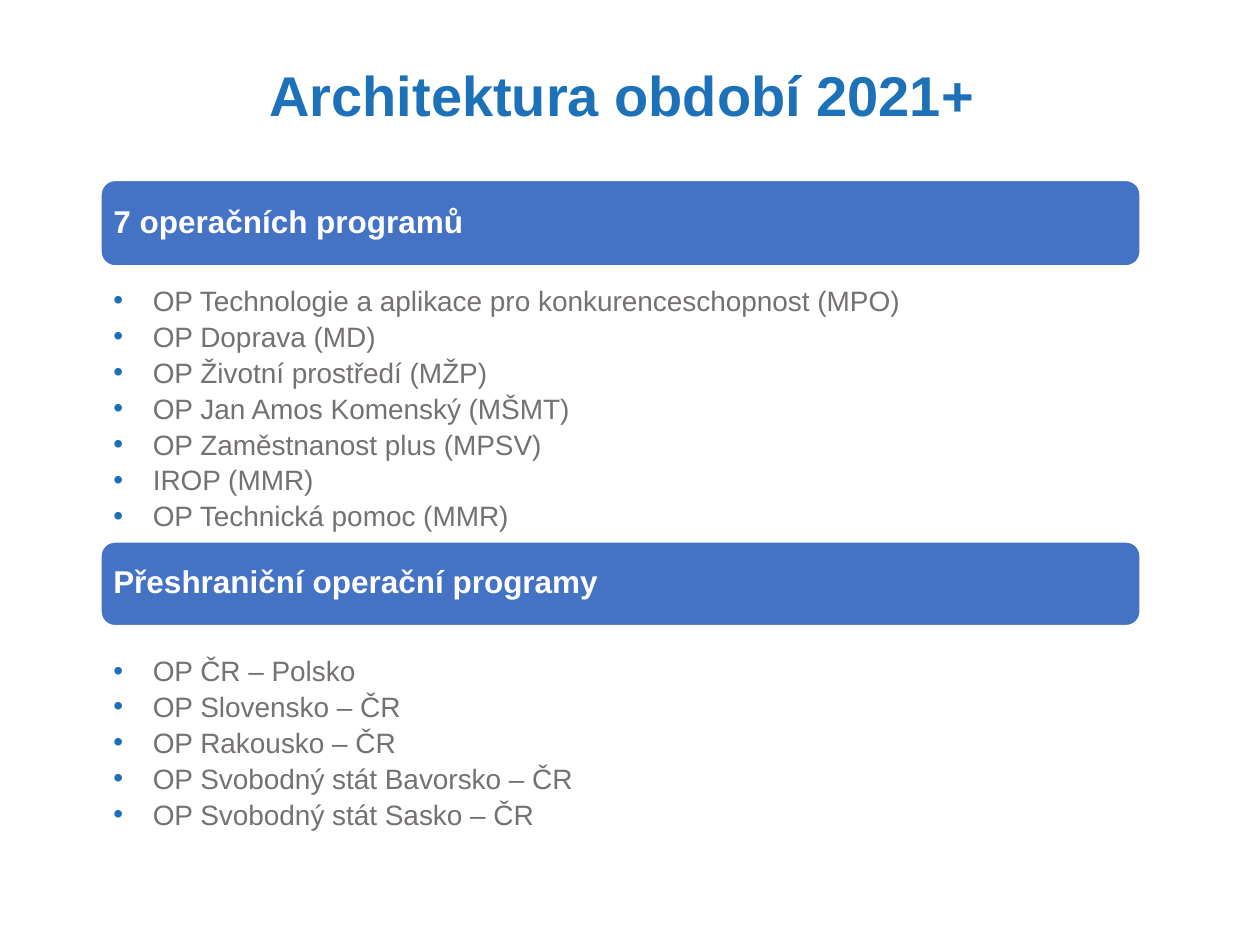
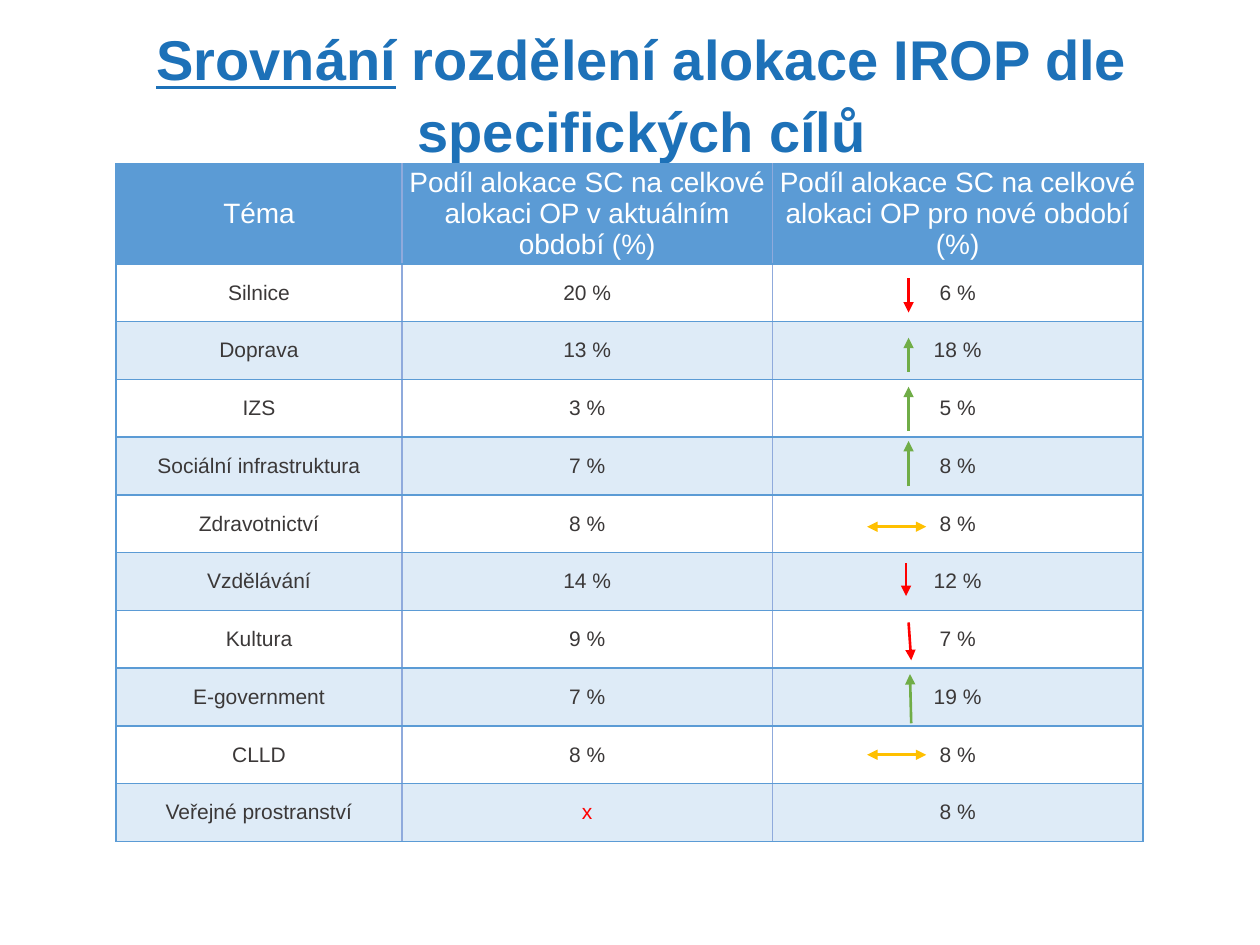
from lxml import etree
from pptx import Presentation
from pptx.dml.color import RGBColor
from pptx.enum.shapes import MSO_CONNECTOR, MSO_SHAPE
from pptx.enum.text import MSO_ANCHOR, MSO_AUTO_SIZE, PP_ALIGN
from pptx.oxml.ns import qn
from pptx.util import Pt

LEFT, CENTER = PP_ALIGN.LEFT, PP_ALIGN.CENTER
TOP, MIDDLE = MSO_ANCHOR.TOP, MSO_ANCHOR.MIDDLE
NO_FIT = MSO_AUTO_SIZE.NONE
ROUNDED = MSO_SHAPE.ROUNDED_RECTANGLE
STRAIGHT = MSO_CONNECTOR.STRAIGHT
TWO_LISTS_LAYOUT, TITLE_LAYOUT = 3, 5

FONT = "Arial"
TITLE_BLUE, BULLET_BLUE, BAND_BLUE = "1D71B8", "1D70B8", "4472C4"
TABLE_BLUE, DIVIDER_BLUE, PALE_BLUE = "5B9BD5", "8FAADC", "DEEBF7"
WHITE, GREY, DARK = "FFFFFF", "767171", "3B3838"
RED, GREEN, AMBER = "FF0000", "70AD47", "FFC000"
LOOSE = 1.07
HEADER_HEIGHT, ROW_HEIGHT = 57.2, 33
COLUMN_WIDTHS = (163.4, 211.7, 211.7)

SECTIONS = [
    ("7 operačních programů", (57.6, 103, 594, 49), (57.6, 157, 620.6, 165), [
        "OP Technologie a aplikace pro konkurenceschopnost (MPO)",
        "OP Doprava (MD)",
        "OP Životní prostředí (MŽP)",
        "OP Jan Amos Komenský (MŠMT)",
        "OP Zaměstnanost plus (MPSV)",
        "IROP (MMR)",
        "OP Technická pomoc (MMR)",
    ]),
    ("Přeshraniční operační programy", (57.6, 309.6, 594, 48), (57.6, 368.6, 530, 126), [
        "OP ČR – Polsko",
        "OP Slovensko – ČR",
        "OP Rakousko – ČR",
        "OP Svobodný stát Bavorsko – ČR",
        "OP Svobodný stát Sasko – ČR",
    ]),
]
HEADINGS = (
    "Téma",
    "Podíl alokace SC na celkové alokaci OP v aktuálním období (%)",
    "Podíl alokace SC na celkové alokaci OP pro nové období (%)",
)
SHARES = [
    ("Silnice", "20 %", "6 %"),
    ("Doprava", "13 %", "18 %"),
    ("IZS", "3 %", "5 %"),
    ("Sociální infrastruktura", "7 %", "8 %"),
    ("Zdravotnictví", "8 %", "8 %"),
    ("Vzdělávání", "14 %", "12 %"),
    ("Kultura", "9 %", "7 %"),
    ("E-government", "7 %", "19 %"),
    ("CLLD", "8 %", "8 %"),
    ("Veřejné prostranství", "x", "8 %"),
]
TRENDS = [
    (RED, 77.8, 8.3, 77.8, 27.8),
    (GREEN, 77.8, 28.6, 77.8, 9.2),
    (GREEN, 77.8, 29.4, 77.8, 4.2),
    (GREEN, 77.8, 28.1, 77.8, 2.2),
    (AMBER, 87.9, 18.2, 54.1, 18.2),
    (RED, 76.4, 6, 76.4, 24.8),
    (RED, 77.8, 6.9, 79.3, 28.5),
    (GREEN, 79.3, 31.5, 78.6, 3.4),
    (AMBER, 87.9, 16.5, 54.1, 16.5),
]


def color(value):
    """Turn a hex string into a colour."""
    return RGBColor.from_string(value)


def style(para, size, tint, bold=False, align=LEFT, spacing=1.0):
    """Set the font and spacing of a whole paragraph."""
    para.alignment = align
    para.line_spacing = spacing
    para.space_before = para.space_after = Pt(0)
    font = para.font
    font.name, font.size, font.bold = FONT, Pt(size), bold
    font.color.rgb = color(tint)


def place(shape, box):
    """Move a shape to a box of left, top, width and height."""
    shape.left, shape.top, shape.width, shape.height = map(Pt, box)


def add_child(parent, tag, **attributes):
    """Append a drawing element and return it."""
    return etree.SubElement(parent, qn(tag), attributes)


def add_title(page, box, spans, anchor, spacing):
    """Fill the title placeholder with (text, underlined) spans."""
    title = page.shapes.title
    place(title, box)
    frame = title.text_frame
    frame.auto_size, frame.vertical_anchor = NO_FIT, anchor
    para = frame.paragraphs[0]
    style(para, 32, TITLE_BLUE, True, CENTER, spacing)
    for text, underlined in spans:
        span = para.add_run()
        span.text = text
        if underlined:
            span.font.underline = True


def add_band(page, box, text):
    """Draw a rounded heading band."""
    band = page.shapes.add_shape(ROUNDED, *map(Pt, box))
    band.shadow.inherit = False
    band.fill.solid()
    band.fill.fore_color.rgb = color(BAND_BLUE)
    band.line.color.rgb = color(WHITE)
    band.line.width = Pt(1)
    frame = band.text_frame
    frame.word_wrap, frame.vertical_anchor = True, MIDDLE
    frame.margin_left = Pt(4.8)
    frame.text = text
    style(frame.paragraphs[0], 18, WHITE, True, spacing=0.9)


def fill_list(holder, box, items):
    """Fill a body placeholder with bulleted items."""
    place(holder, box)
    frame = holder.text_frame
    frame.auto_size, frame.vertical_anchor = NO_FIT, TOP
    frame.text = "\n".join(items)
    for para in frame.paragraphs:
        props = para._p.get_or_add_pPr()
        props.set("marL", str(Pt(22.5)))
        props.set("indent", str(-Pt(22.5)))
        add_child(add_child(props, "a:buClr"), "a:srgbClr", val=BULLET_BLUE)
        add_child(props, "a:buFont", typeface=FONT)
        add_child(props, "a:buChar", char="•")
        style(para, 16, GREY, spacing=LOOSE)


def format_cell(cell, text, size, tint, fill, left, right):
    """Write one table cell with its borders and fill."""
    cell.text = text
    cell.vertical_anchor = MIDDLE
    cell.margin_left = cell.margin_right = cell.margin_top = cell.margin_bottom = 0
    style(cell.text_frame.paragraphs[0], size, tint, align=CENTER)
    props = cell._tc.get_or_add_tcPr()
    borders = {"a:lnL": left, "a:lnR": right, "a:lnT": TABLE_BLUE, "a:lnB": TABLE_BLUE}
    for tag, line_tint in borders.items():
        line = add_child(props, tag, w=str(Pt(1)))
        add_child(add_child(line, "a:solidFill"), "a:srgbClr", val=line_tint)
    cell.fill.solid()
    cell.fill.fore_color.rgb = color(fill)


def add_share_table(page, left, top):
    """Draw the table of allocation shares."""
    rows = [HEADINGS, *SHARES]
    height = HEADER_HEIGHT + ROW_HEIGHT * len(SHARES)
    table = page.shapes.add_table(
        len(rows), len(HEADINGS), Pt(left), Pt(top), Pt(sum(COLUMN_WIDTHS)), Pt(height)
    ).table
    table.first_row = table.horz_banding = False
    for column, width in zip(table.columns, COLUMN_WIDTHS):
        column.width = Pt(width)
    last = len(HEADINGS) - 1
    for r, texts in enumerate(rows):
        table.rows[r].height = Pt(ROW_HEIGHT if r else HEADER_HEIGHT)
        fill = TABLE_BLUE if r == 0 else WHITE if r % 2 else PALE_BLUE
        for c, text in enumerate(texts):
            tint = WHITE if r == 0 else RED if text == "x" else DARK
            format_cell(
                table.cell(r, c), text, 12 if r else 16, tint, fill,
                DIVIDER_BLUE if c else TABLE_BLUE,
                DIVIDER_BLUE if c < last else TABLE_BLUE,
            )


def add_trend_arrows(page, left, top):
    """Draw one trend arrow per row, from the corner of the first value cell."""
    for row, (tint, x1, y1, x2, y2) in enumerate(TRENDS):
        row_top = top + row * ROW_HEIGHT
        arrow = page.shapes.add_connector(
            STRAIGHT, Pt(left + x1), Pt(row_top + y1), Pt(left + x2), Pt(row_top + y2)
        )
        arrow.line.color.rgb = color(tint)
        arrow.line.width = Pt(1.5)
        line = arrow.line._get_or_add_ln()
        if tint == AMBER:
            add_child(line, "a:headEnd", type="triangle")
        add_child(line, "a:tailEnd", type="triangle")
        add_child(arrow._element.spPr, "a:effectLst")


def build_programmes(deck):
    """Build the slide that lists the programmes."""
    page = deck.slides.add_slide(deck.slide_layouts[TWO_LISTS_LAYOUT])
    add_title(page, (49.7, -20.9, 620.6, 154), [("Architektura období 2021+ ", False)], MIDDLE, 0.9)
    for number, (heading, band_box, list_box, items) in enumerate(SECTIONS, 1):
        add_band(page, band_box, heading)
        fill_list(page.placeholders[number], list_box, items)


def build_comparison(deck):
    """Build the slide that compares the allocations."""
    page = deck.slides.add_slide(deck.slide_layouts[TITLE_LAYOUT])
    spans = [("Srovnání", True), (" rozdělení alokace IROP dle specifických cílů", False)]
    add_title(page, (13.7, 8, 706.3, 85), spans, TOP, LOOSE)
    left, top = 66.3, 93.6
    add_share_table(page, left, top)
    add_trend_arrows(page, left + sum(COLUMN_WIDTHS[:2]), top + HEADER_HEIGHT)


def main():
    """Build and save the deck."""
    deck = Presentation()
    deck.slide_width, deck.slide_height = Pt(720), Pt(540)
    build_programmes(deck)
    build_comparison(deck)
    deck.save("out.pptx")


if __name__ == "__main__":
    main()
